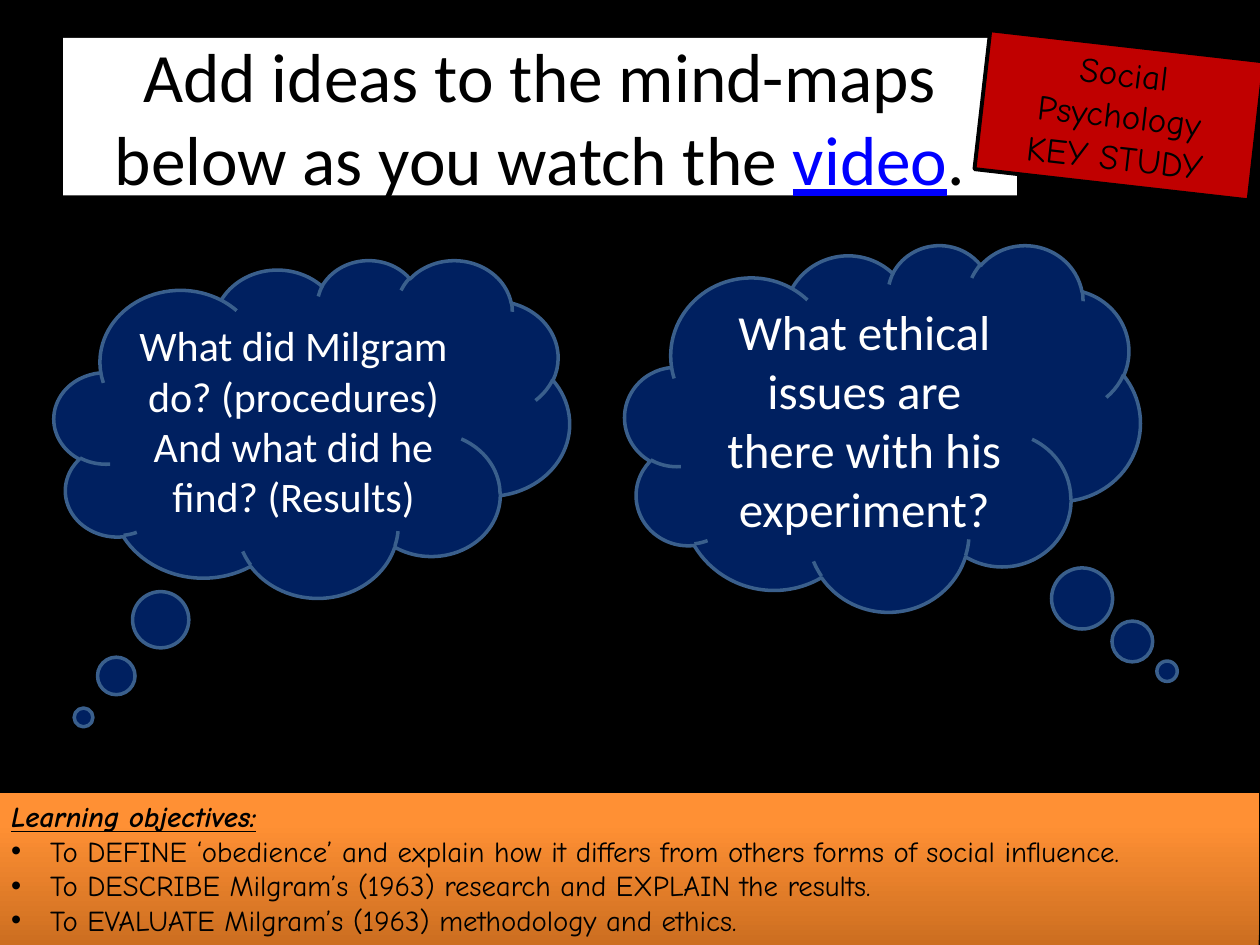
from copy import deepcopy

from lxml import etree
from pptx import Presentation
from pptx.dml.color import RGBColor
from pptx.enum.shapes import MSO_SHAPE
from pptx.enum.text import MSO_ANCHOR, MSO_AUTO_SIZE, PP_ALIGN
from pptx.oxml.ns import qn
from pptx.util import Inches, Pt

BLACK = RGBColor(0x00, 0x00, 0x00)
WHITE = RGBColor(0xFF, 0xFF, 0xFF)
BLUE = RGBColor(0x00, 0x00, 0xFF)
NAVY = RGBColor(0x00, 0x20, 0x60)
STEEL = RGBColor(0x3A, 0x5F, 0x8C)
RED = RGBColor(0xC0, 0x00, 0x00)
STOPS = [
    (0, RGBColor(0xCC, 0x6E, 0x20)),
    (80, RGBColor(0xFF, 0x90, 0x34)),
    (100, RGBColor(0xFF, 0x91, 0x36)),
]
RECT, CLOUD = MSO_SHAPE.RECTANGLE, MSO_SHAPE.CLOUD_CALLOUT
CENTER, LEFT = PP_ALIGN.CENTER, PP_ALIGN.LEFT
TOP, MIDDLE = MSO_ANCHOR.TOP, MSO_ANCHOR.MIDDLE

prs = Presentation()
prs.slide_width, prs.slide_height = Inches(10), Inches(7.5)
slide = prs.slides.add_slide(prs.slide_layouts[5])
slide.background.fill.solid()
slide.background.fill.fore_color.rgb = BLACK


def style(shape, text, font, size, color, align, anchor):
    """Fill the shape with text in one font, one paragraph per line."""
    frame = shape.text_frame
    frame.word_wrap = True
    frame.auto_size = MSO_AUTO_SIZE.NONE
    frame.vertical_anchor = anchor
    frame.text = text
    for para in frame.paragraphs:
        para.alignment = align
        for run in para.runs:
            run.font.name = font
            run.font.size = Pt(size)
            run.font.color.rgb = color


def add_box(kind, left, top, width, height):
    shape = slide.shapes.add_shape(
        kind, Inches(left), Inches(top), Inches(width), Inches(height))
    shape.shadow.inherit = False
    return shape


# Title
title = slide.shapes.title
title.left, title.top = Inches(0.5), Inches(0.3)
title.width, title.height = Inches(7.57), Inches(1.25)
title.fill.solid()
title.fill.fore_color.rgb = WHITE
style(title, "Add ideas to the mind-maps below as you watch the ",
      "Calibri", 39.6, BLACK, CENTER, MIDDLE)
for word, color in (("video", BLUE), (".", BLACK)):
    run = title.text_frame.paragraphs[0].add_run()
    run.text = word
    run.font.name = "Calibri"
    run.font.size = Pt(39.6)
    run.font.color.rgb = color
    run.font.underline = color == BLUE

# Learning objectives
goals = add_box(RECT, -0.01, 6.29, 10, 1.21)
goals.line.fill.background()
goals.fill.gradient()
goals.fill.gradient_angle = 90
stops = goals.fill.gradient_stops
last = goals._element.spPr.findall(".//" + qn("a:gs"))[-1]
last.addnext(deepcopy(last))
for stop, (place, color) in zip(goals.fill.gradient_stops, STOPS):
    stop.position = place / 100
    stop.color.rgb = color

effects = goals._element.spPr.find(qn("a:effectLst"))
shadow = etree.SubElement(
    effects, qn("a:outerShdw"), blurRad=str(Pt(3.1)), dist=str(Pt(1.8)),
    dir="5400000", rotWithShape="0")
tint = etree.SubElement(shadow, qn("a:srgbClr"), val="000000")
etree.SubElement(tint, qn("a:alpha"), val="35000")

style(goals, "\n".join([
    "Learning objectives:",
    "To DEFINE ‘obedience’ and explain how it differs from others forms of social influence.",
    "To DESCRIBE Milgram’s (1963) research and EXPLAIN the results.",
    "To EVALUATE Milgram’s (1963) methodology and ethics.",
]), "Comic Neue", 16.5, BLACK, LEFT, TOP)
head, *items = goals.text_frame.paragraphs
font = head.runs[0].font
font.bold = font.italic = font.underline = True
for item in items:
    props = item._p.get_or_add_pPr()
    props.set("marL", str(Inches(0.31)))
    props.set("indent", str(-Inches(0.31)))
    etree.SubElement(props, qn("a:buFont"), typeface="Arial")
    etree.SubElement(props, qn("a:buChar"), char="•")

# Thought clouds
for left, top, height, tail, size, text in (
    (4.96, 1.94, 2.91, (0.552, 0.664), 28,
     "What ethical issues are there with his experiment?"),
    (0.43, 2.06, 2.68, (-0.443, 0.856), 24,
     "What did Milgram do? (procedures) And what did he find? (Results)"),
):
    cloud = add_box(CLOUD, left, top, 4.09, height)
    cloud.adjustments[0], cloud.adjustments[1] = tail
    cloud.fill.solid()
    cloud.fill.fore_color.rgb = NAVY
    cloud.line.color.rgb = STEEL
    cloud.line.width = Pt(2)
    style(cloud, text, "Calibri", size, WHITE, CENTER, MIDDLE)

# Key study label
label = add_box(RECT, 7.79, 0.36, 2.19, 1.11)
label.rotation = 6.5
label.fill.solid()
label.fill.fore_color.rgb = RED
label.line.color.rgb = BLACK
label.line.width = Pt(2.25)
style(label, "Social Psychology\nKEY STUDY", "Comic Neue", 20, BLACK, CENTER, TOP)

prs.save("out.pptx")
